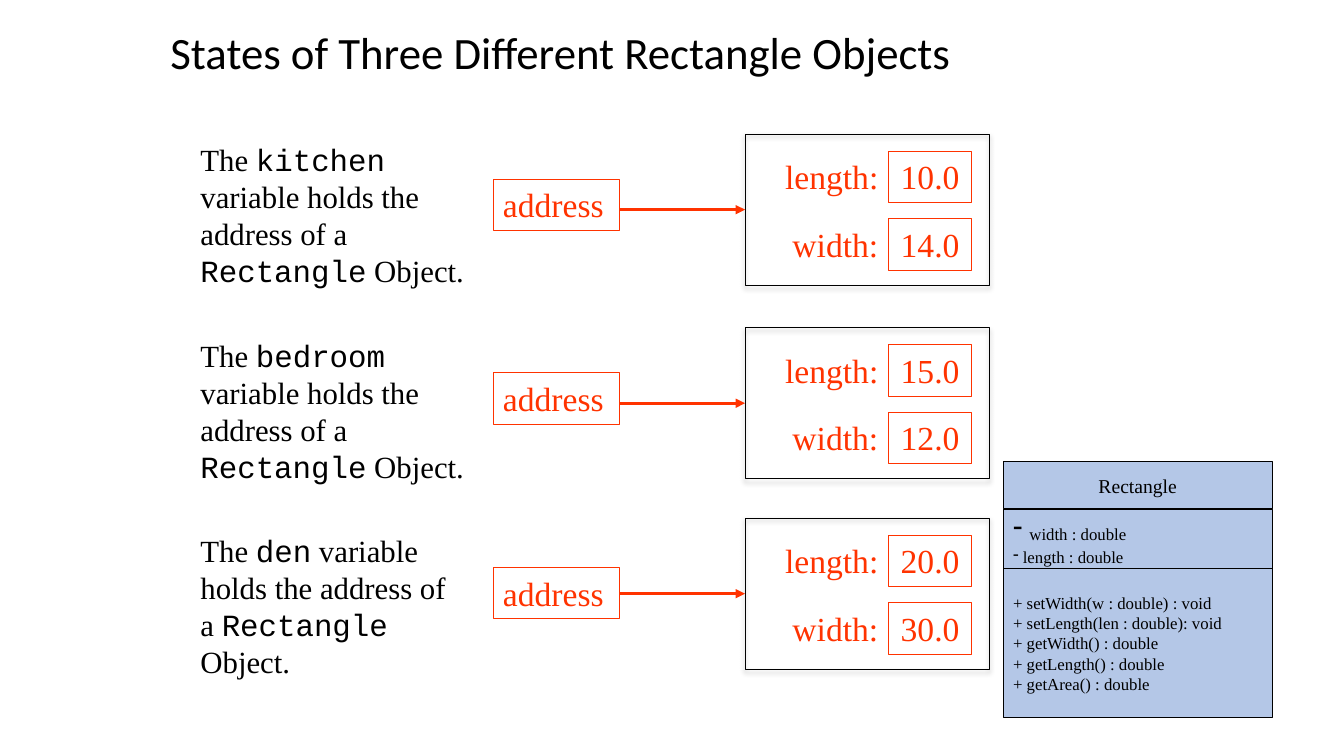
from lxml import etree
from pptx import Presentation
from pptx.dml.color import RGBColor
from pptx.enum.shapes import MSO_CONNECTOR, MSO_SHAPE
from pptx.enum.text import MSO_ANCHOR, MSO_AUTO_SIZE, PP_ALIGN
from pptx.oxml.ns import qn
from pptx.util import Inches, Pt

RED = RGBColor(0xFF, 0x33, 0x00)
BLACK = RGBColor(0x00, 0x00, 0x00)
BLUE = RGBColor(0xB4, 0xC7, 0xE7)
SERIF, MONO, SANS = "Times New Roman", "Courier New", "Calibri"

# Variable, length, width, then the tops of description, address and object
OBJECTS = [
    ("kitchen", "10.0", "14.0", 1.35, 1.78, 1.33),
    ("bedroom", "15.0", "12.0", 3.29, 3.70, 3.25),
    ("den", "20.0", "30.0", 5.23, 5.63, 5.14),
]
METHODS = [
    "+ setWidth(w : double) : void",
    "+ setLength(len : double): void",
    "+ getWidth() : double",
    "+ getLength() : double",
    "+ getArea() : double",
]


def add_run(p, text, size, color=BLACK, font=SERIF):
    r = p.add_run()
    r.text = text
    r.font.size = Pt(size)
    r.font.name = font
    r.font.color.rgb = color


def add_box(shapes, x, y, w, h, line=BLACK, fill=None):
    s = shapes.add_shape(MSO_SHAPE.RECTANGLE, Inches(x), Inches(y), Inches(w), Inches(h))
    s.shadow.inherit = False
    if fill is None:
        s.fill.background()
    else:
        s.fill.solid()
        s.fill.fore_color.rgb = fill
    s.line.color.rgb = line
    s.line.width = Pt(0.75)
    return s


def first_paragraph(s, align=PP_ALIGN.LEFT, anchor=MSO_ANCHOR.TOP):
    tf = s.text_frame
    tf.word_wrap = True
    tf.vertical_anchor = anchor
    p = tf.paragraphs[0]
    p.alignment = align
    return p


def add_label(slide, x, y, w, h, align=PP_ALIGN.LEFT):
    s = slide.shapes.add_textbox(Inches(x), Inches(y), Inches(w), Inches(h))
    return first_paragraph(s, align)


def add_shadow(s):
    effects = s._element.spPr.find(qn("a:effectLst"))
    shadow = etree.SubElement(effects, qn("a:outerShdw"), blurRad=str(Pt(3.5)),
                              dist=str(Pt(2.2)), dir="5400000", rotWithShape="0")
    color = etree.SubElement(shadow, qn("a:srgbClr"), val=str(BLACK))
    etree.SubElement(color, qn("a:alpha"), val="32000")


def add_arrow(slide, x1, x2, y):
    c = slide.shapes.add_connector(MSO_CONNECTOR.STRAIGHT, Inches(x1), Inches(y),
                                   Inches(x2), Inches(y))
    c.line.color.rgb = RED
    c.line.width = Pt(2.25)
    etree.SubElement(c.line._get_or_add_ln(), qn("a:tailEnd"), type="triangle")
    etree.SubElement(c._element.spPr, qn("a:effectLst"))


def add_title(slide, x, y, w, h):
    s = slide.shapes.title
    s.left, s.top, s.width, s.height = Inches(x), Inches(y), Inches(w), Inches(h)
    p = first_paragraph(s, anchor=MSO_ANCHOR.MIDDLE)
    s.text_frame.auto_size = MSO_AUTO_SIZE.NONE
    p.line_spacing = 0.9
    add_run(p, "States of Three Different Rectangle Objects", 32, font=SANS)


def add_description(slide, variable, x, y, w, h):
    p = add_label(slide, x, y, w, h)
    for text, font in [("The ", SERIF), (variable, MONO),
                       (" variable holds the address of a ", SERIF),
                       ("Rectangle", MONO), (" Object.", SERIF)]:
        add_run(p, text, 22, font=font)


def add_address(slide, x, y, w, h):
    s = add_box(slide.shapes, x, y, w, h, RED)
    add_run(first_paragraph(s), "address", 24, RED)


def add_object(slide, length, width, x, y, w, h):
    fields = [("length:", length), ("width:", width)]
    for i, (name, value) in enumerate(fields):
        top = y + 0.17 + 0.67 * i
        s = add_box(slide.shapes, x + 1.42, top, 0.83, 0.51, RED)
        add_run(first_paragraph(s, PP_ALIGN.CENTER), value, 24, RED)
        p = add_label(slide, x + 0.17, top, 1.25, 0.5, PP_ALIGN.RIGHT)
        add_run(p, name, 24, RED)
    add_shadow(add_box(slide.shapes, x, y, w, h))


def add_class_diagram(slide, x, y, w):
    group = slide.shapes.add_group_shape()

    def add_part(top, h, align=PP_ALIGN.LEFT):
        s = add_box(group.shapes, x, y + top, w, h, fill=BLUE)
        return s.text_frame, first_paragraph(s, align, MSO_ANCHOR.MIDDLE)

    # Class name
    tf, p = add_part(0, 0.47, PP_ALIGN.CENTER)
    add_run(p, "Rectangle", 14)

    # Fields, each with a dash as its bullet
    tf, p = add_part(0.47, 0.61)
    second = tf.add_paragraph()
    for bulleted in (p, second):
        etree.SubElement(bulleted._p.get_or_add_pPr(), qn("a:buChar"), char="-")
    add_run(p, " ", 20)
    add_run(p, "width : double", 12)
    add_run(second, " length : double", 12)

    # Methods
    tf, p = add_part(1.06, 1.48)
    for i, method in enumerate(METHODS):
        add_run(tf.add_paragraph() if i else p, method, 12)


def main():
    prs = Presentation()
    prs.slide_width, prs.slide_height = Inches(13.33), Inches(7.5)
    slide = prs.slides.add_slide(prs.slide_layouts[5])
    add_title(slide, 1.59, 0, 8.03, 1.09)
    for variable, length, width, text_y, address_y, object_y in OBJECTS:
        add_description(slide, variable, 1.89, text_y, 2.83, 1.58)
        add_address(slide, 4.89, address_y, 1.25, 0.51)
        add_object(slide, length, width, 7.39, object_y, 2.42, 1.5)
        add_arrow(slide, 6.14, 7.39, object_y + 0.75)
    add_class_diagram(slide, 9.95, 4.58, 2.67)
    prs.save("out.pptx")


if __name__ == "__main__":
    main()
